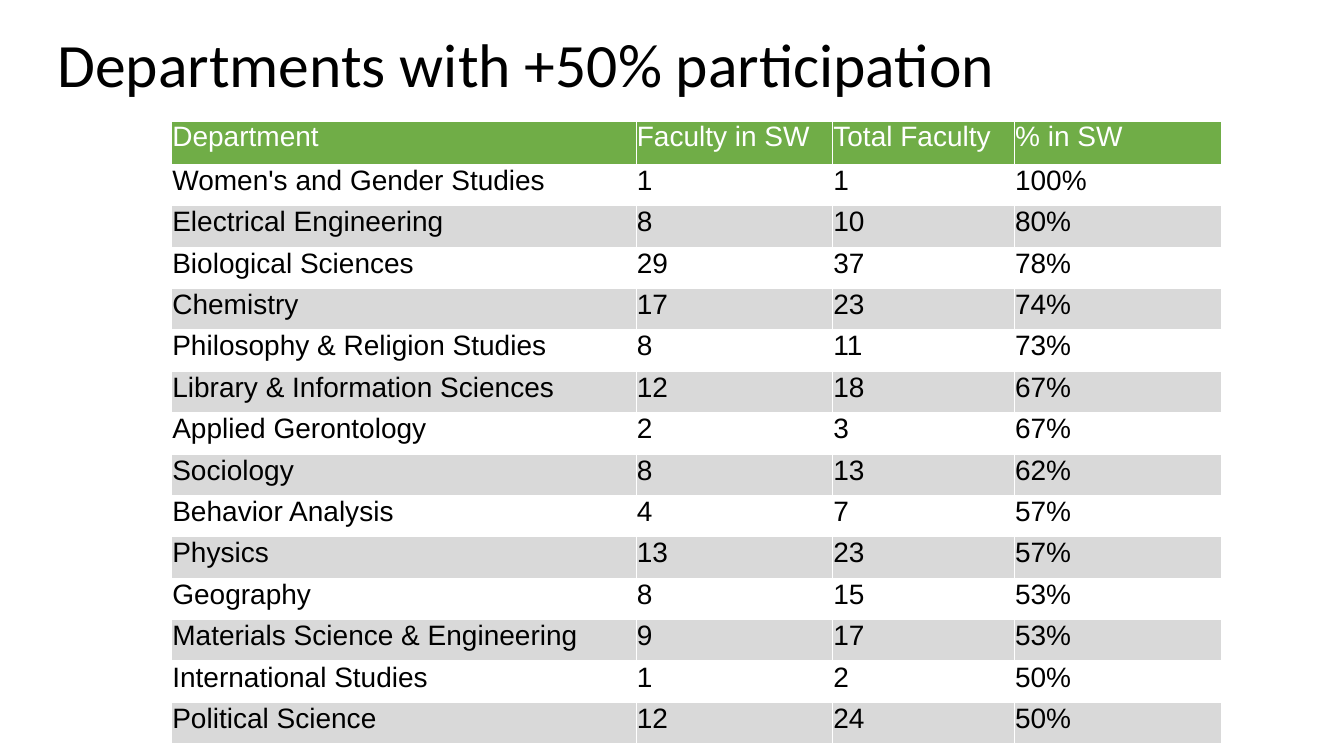
import pptx
import pptx.dml.color
import pptx.enum.text
import pptx.oxml
import pptx.oxml.ns
import pptx.util

Pt = pptx.util.Pt

HEADINGS = ("Department", "Faculty in SW", "Total Faculty", "% in SW")
DEPARTMENTS = (
    ("Women's and Gender Studies", 1, 1),
    ("Electrical Engineering", 8, 10),
    ("Biological Sciences", 29, 37),
    ("Chemistry", 17, 23),
    ("Philosophy & Religion Studies", 8, 11),
    ("Library & Information Sciences", 12, 18),
    ("Applied Gerontology", 2, 3),
    ("Sociology", 8, 13),
    ("Behavior Analysis", 4, 7),
    ("Physics", 13, 23),
    ("Geography", 8, 15),
    ("Materials Science & Engineering", 9, 17),
    ("International Studies", 1, 2),
    ("Political Science", 12, 24),
)


def color(value):
    return pptx.dml.color.RGBColor.from_string(value)


def apply(target, values):
    for name, value in values.items():
        setattr(target, name, value)


class SlideBuilder:
    black = "000000"
    white = "FFFFFF"
    green = "70AD47"
    gray = "D9D9D9"
    title_font = {"name": "Calibri", "size": Pt(44)}
    table_font = {"name": "Arial", "size": Pt(20)}
    cell_margins = {
        "margin_left": Pt(0.5),
        "margin_right": Pt(0.5),
        "margin_top": Pt(0.5),
        "margin_bottom": Pt(0),
    }

    def __init__(self, presentation):
        self.slide = presentation.slides.add_slide(presentation.slide_layouts[5])

    def add_text(self, paragraph, text, font, font_color):
        run = paragraph.add_run()
        run.text = text
        apply(run.font, font)
        run.font.color.rgb = color(font_color)

    def title(self, text, left, top, width, height):
        shape = self.slide.shapes.title
        apply(shape, {"left": Pt(left), "top": Pt(top), "width": Pt(width), "height": Pt(height)})
        apply(shape.text_frame, {
            "word_wrap": True,
            "vertical_anchor": pptx.enum.text.MSO_ANCHOR.MIDDLE,
        })
        paragraph = shape.text_frame.paragraphs[0]
        apply(paragraph, {"alignment": pptx.enum.text.PP_ALIGN.LEFT, "line_spacing": 0.9})
        self.add_text(paragraph, text, self.title_font, self.black)

    def borders(self, cell):
        properties = cell._tc.get_or_add_tcPr()
        for index, side in enumerate("LRTB"):
            line = pptx.oxml.parse_xml(
                f'<a:ln{side} {pptx.oxml.ns.nsdecls("a")} w="{Pt(1)}"><a:solidFill>'
                f'<a:srgbClr val="{self.white}"/></a:solidFill></a:ln{side}>'
            )
            properties.insert(index, line)

    def cell(self, cell, text, fill, font_color):
        apply(cell, self.cell_margins)
        self.add_text(cell.text_frame.paragraphs[0], text, self.table_font, font_color)
        if fill:
            cell.fill.solid()
            cell.fill.fore_color.rgb = color(fill)
        else:
            cell.fill.background()
        self.borders(cell)

    def table(self, rows, left, top, widths, header_height, row_height):
        height = header_height + row_height * (len(rows) - 1)
        table = self.slide.shapes.add_table(
            len(rows), len(widths), Pt(left), Pt(top), Pt(sum(widths)), Pt(height)
        ).table
        for column, width in zip(table.columns, widths):
            column.width = Pt(width)
        for row_index, values in enumerate(rows):
            header = row_index == 0
            table.rows[row_index].height = Pt(header_height if header else row_height)
            band = None if row_index % 2 else self.gray
            fill = self.green if header else band
            font_color = self.white if header else self.black
            for column_index, text in enumerate(values):
                self.cell(table.cell(row_index, column_index), text, fill, font_color)


def main():
    presentation = pptx.Presentation()
    apply(presentation, {"slide_width": Pt(960), "slide_height": Pt(540)})
    rows = [HEADINGS] + [
        (name, str(faculty), str(total), f"{faculty / total:.0%}")
        for name, faculty, total in DEPARTMENTS
    ]
    builder = SlideBuilder(presentation)
    builder.title("Departments with +50% participation", 33.8, 9.4, 828, 77)
    builder.table(rows, 122.6, 86.4, (331.8, 140.4, 129.8, 148), 31, 29.57)
    presentation.save("out.pptx")


if __name__ == "__main__":
    main()
